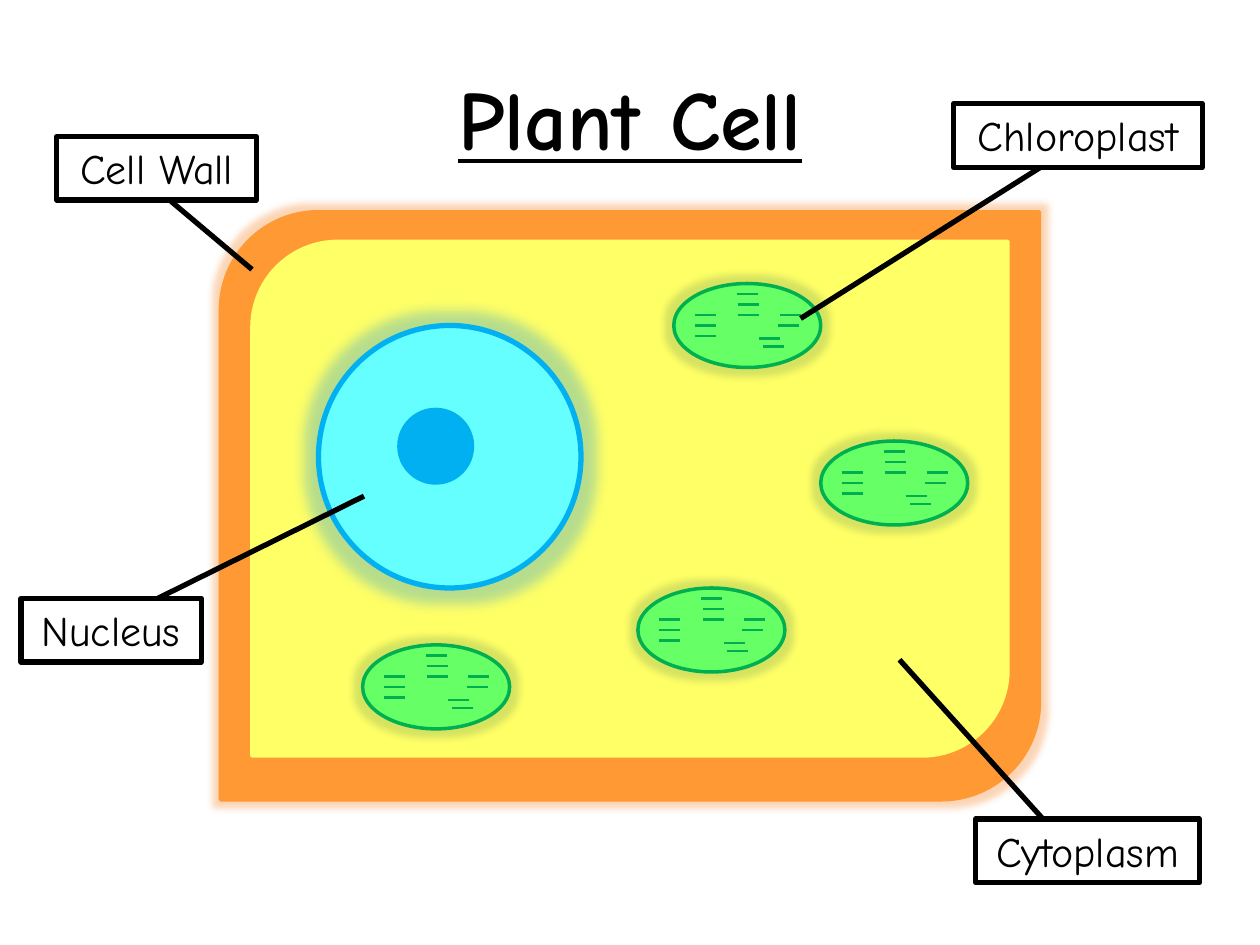
from lxml.etree import SubElement
from pptx import Presentation
from pptx.dml.color import RGBColor
from pptx.enum.shapes import MSO_CONNECTOR, MSO_SHAPE as Preset
from pptx.enum.text import MSO_ANCHOR as Anchor, MSO_AUTO_SIZE as AutoSize, PP_ALIGN as Align
from pptx.oxml.ns import qn
from pptx.util import Pt

BLACK = RGBColor(0x00, 0x00, 0x00)
ORANGE = RGBColor(0xFF, 0x99, 0x33)
YELLOW = RGBColor(0xFF, 0xFF, 0x66)
CYAN = RGBColor(0x66, 0xFF, 0xFF)
BLUE = RGBColor(0x00, 0xB0, 0xF0)
LIME = RGBColor(0x66, 0xFF, 0x66)
GREEN = RGBColor(0x00, 0xB0, 0x50)
ORANGE_GLOW = RGBColor(0xF7, 0x96, 0x46)
BLUE_GLOW = RGBColor(0x4B, 0xAC, 0xC6)
GREEN_GLOW = RGBColor(0x9B, 0xBB, 0x59)
FONT = "Comic Neue"

TITLE = "Plant Cell"
CELL_PARTS = [
    (Preset.ROUND_2_DIAG_RECTANGLE, (126, 121, 468, 336), ORANGE, ORANGE, 2, (ORANGE_GLOW, 8)),
    (Preset.ROUND_2_DIAG_RECTANGLE, (144, 138, 432, 294), YELLOW, YELLOW, 2, None),
    (Preset.OVAL, (182, 186, 150, 150), CYAN, BLUE, 3, (BLUE_GLOW, 14)),
    (Preset.OVAL, (228, 234, 42, 42), BLUE, BLUE, 2, None),
]
CHLOROPLASTS = [(207.2, 368.5), (385, 162), (469, 252), (364.5, 336)]
CHLOROPLAST_SIZE = (84, 48)
THYLAKOIDS = [(12, 18), (12, 24), (12, 30), (36, 6), (37, 18), (37, 12),
              (60.5, 18), (49, 31.5), (51, 36), (59.5, 24)]
THYLAKOID_LENGTH = 12
LABELS = [
    ("Cell Wall", (32.5, 78, 114, 36.3), (144, 154), (96.5, 114)),
    ("Nucleus", (12, 342, 103, 36.3), (208, 283.5), (90, 342)),
    ("Cytoplasm", (557.5, 468, 128, 36.3), (514, 377), (596, 468)),
    ("Chloroplast", (545, 59.3, 142, 36.3), (457.5, 182), (594, 96)),
]


def set_effects(shape, glow=None):
    effects = SubElement(shape._element.spPr, qn("a:effectLst"))
    if glow:
        color, radius = glow
        halo = SubElement(effects, qn("a:glow"), rad=str(Pt(radius)))
        tint = SubElement(halo, qn("a:srgbClr"), val=str(color))
        SubElement(tint, qn("a:alpha"), val="40000")


def add_part(page, preset, bounds, fill, line, width, glow=None):
    part = page.shapes.add_shape(preset, *map(Pt, bounds))
    if fill is None:
        part.fill.background()
    else:
        part.fill.solid()
        part.fill.fore_color.rgb = fill
    part.line.color.rgb = line
    part.line.width = Pt(width)
    set_effects(part, glow)
    return part


def add_line(page, start, end, color, width):
    line = page.shapes.add_connector(MSO_CONNECTOR.STRAIGHT, *map(Pt, (*start, *end)))
    line.line.color.rgb = color
    line.line.width = Pt(width)
    set_effects(line)


def write(box, text, size, anchor=Anchor.TOP, wrap=False, bold=False, underline=False):
    frame = box.text_frame
    frame.word_wrap = wrap
    frame.auto_size = AutoSize.NONE if wrap else AutoSize.SHAPE_TO_FIT_TEXT
    frame.vertical_anchor = anchor
    para = frame.paragraphs[0]
    para.alignment = Align.CENTER
    span = para.add_run()
    span.text = text
    span.font.name = FONT
    span.font.size = Pt(size)
    span.font.bold = bold
    span.font.underline = underline
    span.font.color.rgb = BLACK


def add_chloroplast(page, left, top):
    add_part(page, Preset.OVAL, (left, top, *CHLOROPLAST_SIZE), LIME, GREEN, 2, (GREEN_GLOW, 8))
    for dx, dy in THYLAKOIDS:
        x, y = left + dx, top + dy
        add_line(page, (x, y), (x + THYLAKOID_LENGTH, y), GREEN, 1.5)


def main():
    deck = Presentation()
    deck.slide_width, deck.slide_height = Pt(720), Pt(540)
    page = deck.slides.add_slide(deck.slide_layouts[5])

    title = page.shapes.title
    title.left, title.top, title.width, title.height = map(Pt, (36, 21.6, 648, 90))
    write(title, TITLE, 48, anchor=Anchor.MIDDLE, wrap=True, bold=True, underline=True)

    for part in CELL_PARTS:
        add_part(page, *part)
    for left, top in CHLOROPLASTS:
        add_chloroplast(page, left, top)
    for text, bounds, target, edge in LABELS:
        add_line(page, target, edge, BLACK, 3)
        box = add_part(page, Preset.RECTANGLE, bounds, None, BLACK, 3)
        write(box, text, 24)

    deck.save("out.pptx")


if __name__ == "__main__":
    main()
